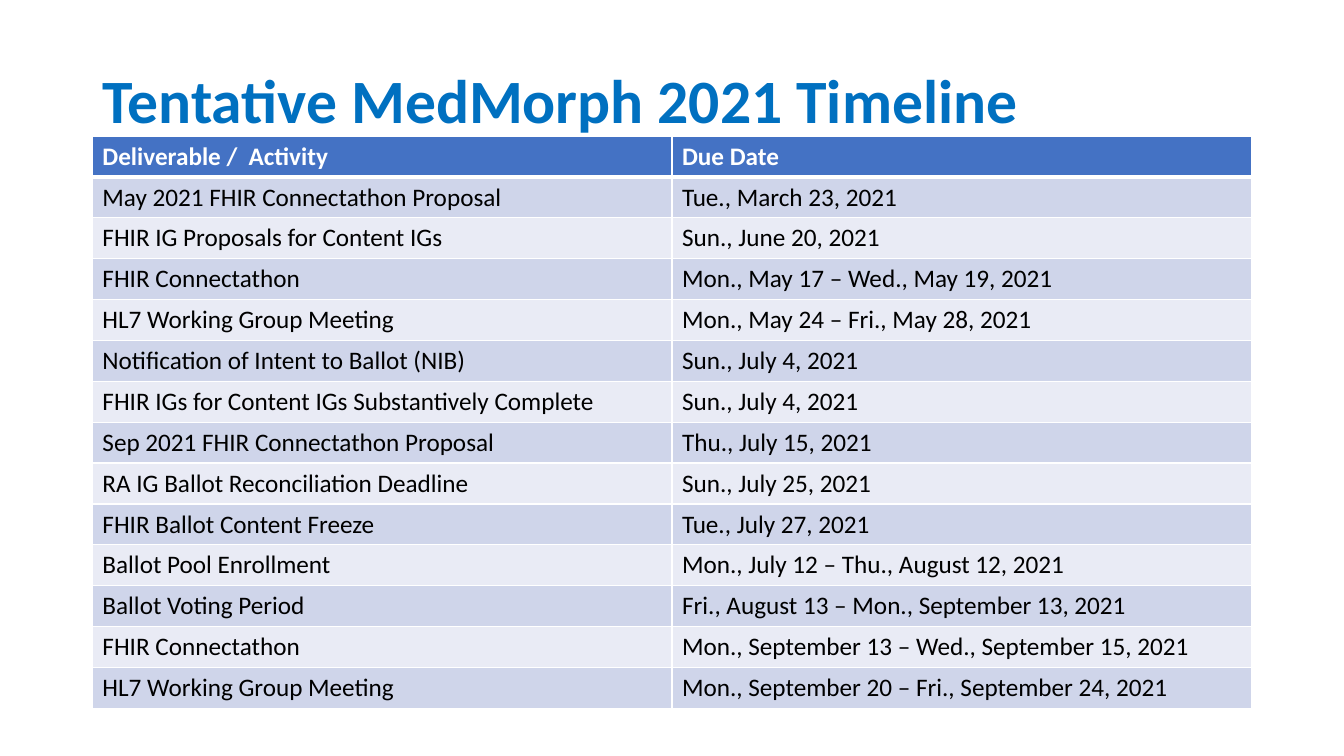
import pptx
import pptx.dml.color
import pptx.enum.text
import pptx.oxml
import pptx.oxml.ns
import pptx.util

Pt = pptx.util.Pt

TITLE = "Tentative MedMorph 2021 Timeline"
HEADER = ("Deliverable /  Activity", "Due Date")
MILESTONES = [
    ("May 2021 FHIR Connectathon Proposal", "Tue., March 23, 2021"),
    ("FHIR IG Proposals for Content IGs", "Sun., June 20, 2021"),
    ("FHIR Connectathon", "Mon., May 17 – Wed., May 19, 2021"),
    ("HL7 Working Group Meeting", "Mon., May 24 – Fri., May 28, 2021"),
    ("Notification of Intent to Ballot (NIB)", "Sun., July 4, 2021"),
    ("FHIR IGs for Content IGs Substantively Complete", "Sun., July 4, 2021"),
    ("Sep 2021 FHIR Connectathon Proposal", "Thu., July 15, 2021"),
    ("RA IG Ballot Reconciliation Deadline", "Sun., July 25, 2021"),
    ("FHIR Ballot Content Freeze", "Tue., July 27, 2021"),
    ("Ballot Pool Enrollment", "Mon., July 12 – Thu., August 12, 2021"),
    ("Ballot Voting Period", "Fri., August 13 – Mon., September 13, 2021"),
    ("FHIR Connectathon", "Mon., September 13 – Wed., September 15, 2021"),
    ("HL7 Working Group Meeting", "Mon., September 20 – Fri., September 24, 2021"),
]

LEFT, WIDTH = 66, 828
TITLE_TOP, TITLE_HEIGHT = 21.6, 104.4
TABLE_TOP, ROW_HEIGHT = 97.2, 29.2
BANDS = ("CFD5EA", "E9EBF5")
HEADER_FILL = "4472C4"
BORDER, HEADER_RULE = 1, 3

TITLE_FORMAT = {"name": "Calibri", "size": Pt(44), "bold": True}
HEADER_FORMAT = {"name": "Calibri", "size": Pt(18), "bold": True}
BODY_FORMAT = {**HEADER_FORMAT, "bold": False}


def rgb(value):
    return pptx.dml.color.RGBColor.from_string(value)


def write(frame, text, font_format, color):
    """Put one formatted run into a text frame and return its paragraph."""
    para = frame.paragraphs[0]
    span = para.add_run()
    span.text = text
    for name, value in font_format.items():
        setattr(span.font, name, value)
    span.font.color.rgb = rgb(color)
    return para


def add_borders(cell, top, bottom):
    """Draw white cell edges; widths are in points."""
    properties = cell._tc.get_or_add_tcPr()
    for side, width in {"L": BORDER, "R": BORDER, "T": top, "B": bottom}.items():
        properties.append(pptx.oxml.parse_xml(
            f'<a:ln{side} {pptx.oxml.ns.nsdecls("a")} w="{Pt(width)}">'
            f'<a:solidFill><a:srgbClr val="FFFFFF"/></a:solidFill></a:ln{side}>'))


def add_title(page):
    title = page.shapes.title
    title.left, title.top = Pt(LEFT), Pt(TITLE_TOP)
    title.width, title.height = Pt(WIDTH), Pt(TITLE_HEIGHT)
    title.text_frame.vertical_anchor = pptx.enum.text.MSO_ANCHOR.MIDDLE
    para = write(title.text_frame, TITLE, TITLE_FORMAT, "0070C0")
    para.alignment = pptx.enum.text.PP_ALIGN.LEFT
    para.line_spacing = 0.9


def add_timeline(page):
    rows = [HEADER, *MILESTONES]
    table = page.shapes.add_table(
        len(rows), len(HEADER), Pt(LEFT), Pt(TABLE_TOP),
        Pt(WIDTH), Pt(ROW_HEIGHT * len(rows))).table
    for row_index, texts in enumerate(rows):
        table.rows[row_index].height = Pt(ROW_HEIGHT)
        is_header = row_index == 0
        fill = HEADER_FILL if is_header else BANDS[(row_index - 1) % 2]
        font_format = HEADER_FORMAT if is_header else BODY_FORMAT
        color = "FFFFFF" if is_header else "000000"
        top = HEADER_RULE if row_index == 1 else BORDER
        bottom = HEADER_RULE if is_header else BORDER
        for column_index, text in enumerate(texts):
            cell = table.cell(row_index, column_index)
            add_borders(cell, top, bottom)
            cell.fill.solid()
            cell.fill.fore_color.rgb = rgb(fill)
            write(cell.text_frame, text, font_format, color)


def main():
    deck = pptx.Presentation()
    deck.slide_width, deck.slide_height = Pt(960), Pt(540)
    page = deck.slides.add_slide(deck.slide_layouts.get_by_name("Title Only"))
    add_title(page)
    add_timeline(page)
    deck.save("out.pptx")


if __name__ == "__main__":
    main()
